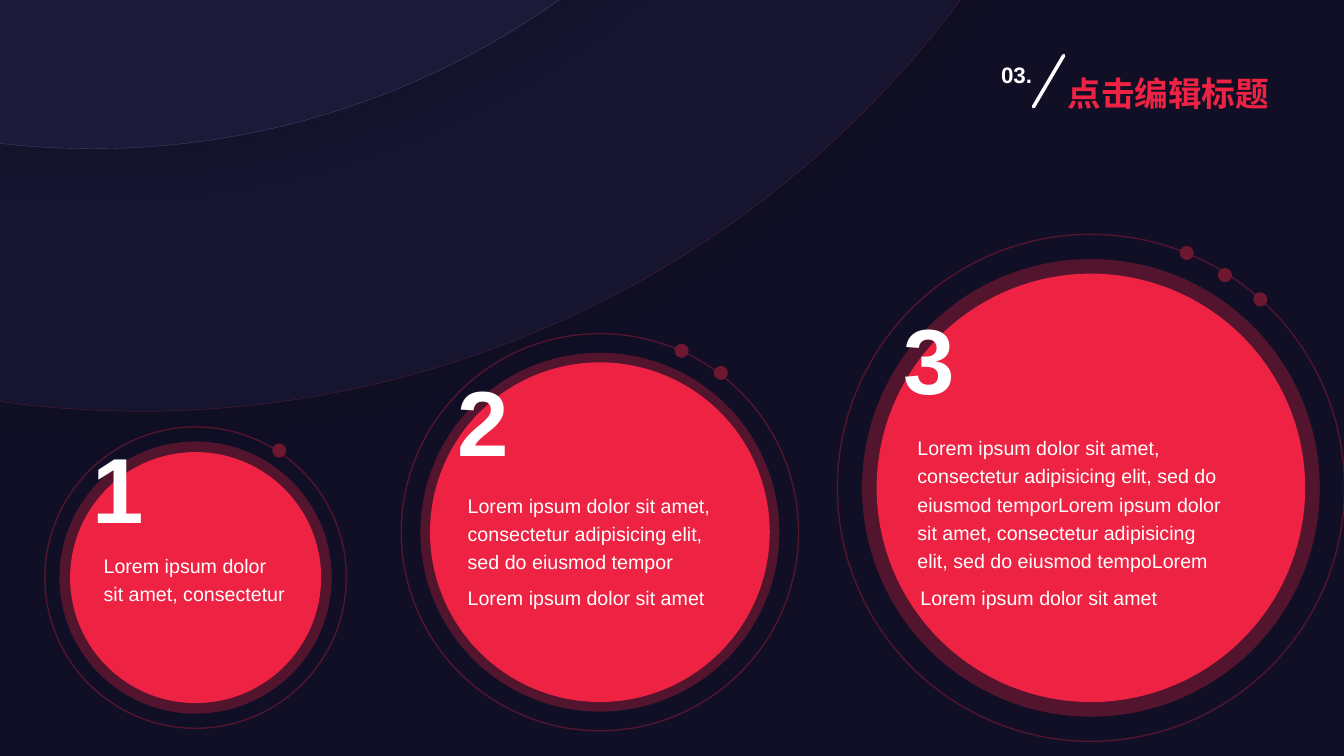
from lxml import etree
from pptx import Presentation
from pptx.dml.color import RGBColor
from pptx.enum.shapes import MSO_CONNECTOR, MSO_SHAPE
from pptx.oxml.ns import qn
from pptx.util import Inches, Pt

OVAL = MSO_SHAPE.OVAL
STRAIGHT = MSO_CONNECTOR.STRAIGHT
COLORS = {
    "night": "110F25",
    "outer_orbit": "17142F",
    "outer_edge": "581F36",
    "inner_orbit": "1D1A39",
    "inner_edge": "424266",
    "red": "EE2243",
    "dot": "6E1731",
    "white": "FFFFFF",
    "black": "000000",
}
FONT = "Arial"
DOT_SIZE = 0.14

LOREM = "Lorem ipsum dolor sit amet"
STAGES = [
    {"number": "1", "center": (1.94, 5.73), "diameters": (2.7, 2.99, 2.49),
     "number_at": (0.82, 4.23),
     "texts": [(0.93, 5.4, 2.03, 0.64, f"{LOREM}, consectetur")],
     "dots": [(2.7, 4.4)]},
    {"number": "2", "center": (5.95, 5.28), "diameters": (3.56, 3.94, 3.37),
     "number_at": (4.44, 3.56),
     "texts": [(4.54, 4.8, 2.81, 0.95,
                f"{LOREM}, consectetur adipisicing elit, sed do eiusmod tempor"),
               (4.54, 5.72, 2.61, 0.36, LOREM)],
     "dots": [(6.69, 3.41), (7.08, 3.63)]},
    {"number": "3", "center": (10.82, 4.84), "diameters": (4.54, 5.03, 4.25),
     "number_at": (8.86, 2.95),
     "texts": [(9, 4.23, 3.29, 2.08,
                f"{LOREM}, consectetur adipisicing elit, sed do eiusmod tempor"
                f"{LOREM}, consectetur adipisicing elit, sed do eiusmod tempoLorem"),
               (9.03, 5.72, 2.61, 0.36, LOREM)],
     "dots": [(11.7, 2.44), (12.08, 2.66), (12.43, 2.9)]},
]


def add_alpha(color_parent, percent):
    color = color_parent.find(".//" + qn("a:srgbClr"))
    etree.SubElement(color, qn("a:alpha"), val=str(percent * 1000))


class SlideBuilder:
    def __init__(self, slide):
        self.slide = slide
        self.shapes = slide.shapes

    def rgb(self, name):
        return RGBColor.from_string(COLORS[name])

    def background(self, color):
        fill = self.slide.background.fill
        fill.solid()
        fill.fore_color.rgb = self.rgb(color)

    def circle(self, center, diameter, fill=None, line=None, width=1, alpha=None):
        left, top = (value - diameter / 2 for value in center)
        circle = self.shapes.add_shape(
            OVAL, Inches(left), Inches(top), Inches(diameter), Inches(diameter))
        circle.shadow.inherit = False
        properties = circle.fill._xPr
        if fill:
            circle.fill.solid()
            circle.fill.fore_color.rgb = self.rgb(fill)
        else:
            circle.fill.background()
        if line:
            circle.line.color.rgb = self.rgb(line)
            circle.line.width = Pt(width)
        else:
            circle.line.fill.background()
        if alpha:
            add_alpha(properties, alpha)
        return circle

    def orbit(self, center, diameter, fill, line):
        circle = self.circle(center, diameter, fill, line, 0.25)
        effects = circle.fill._xPr.find(qn("a:effectLst"))
        shadow = etree.SubElement(
            effects, qn("a:outerShdw"), blurRad=str(Pt(39)), dist=str(Pt(5)),
            dir=str(70 * 60000), algn="ctr", rotWithShape="0")
        etree.SubElement(shadow, qn("a:srgbClr"), val=COLORS["black"])
        add_alpha(shadow, 10)

    def text(self, content, left, top, width, height, size=14,
             color="white", bold=False, spacing=None):
        box = self.shapes.add_textbox(
            Inches(left), Inches(top), Inches(width), Inches(height))
        frame = box.text_frame
        frame.word_wrap = True
        paragraph = frame.paragraphs[0]
        if spacing:
            paragraph.line_spacing = spacing
        run = paragraph.add_run()
        run.text = content
        run.font.name = FONT
        run.font.size = Pt(size)
        run.font.bold = bold
        run.font.color.rgb = self.rgb(color)

    def slash(self, start, end, color, width):
        slash = self.shapes.add_connector(
            STRAIGHT, *(Inches(value) for value in (*start, *end)))
        slash.line.color.rgb = self.rgb(color)
        slash.line.width = Pt(width)
        slash.line._ln.set("cap", "rnd")
        etree.SubElement(slash._element.spPr, qn("a:effectLst"))

    def stage(self, number, center, diameters, number_at, texts, dots):
        halo, ring, disc = diameters
        self.circle(center, halo, fill="red", alpha=30)
        self.circle(center, ring, line="red", alpha=30)
        self.circle(center, disc, fill="red")
        self.text(number, *number_at, 0.77, 1.21, size=66, bold=True)
        for left, top, width, height, content in texts:
            self.text(content, left, top, width, height, spacing=1.2)
        for left, top in dots:
            self.circle((left + DOT_SIZE / 2, top + DOT_SIZE / 2), DOT_SIZE, fill="dot")


def main():
    presentation = Presentation()
    presentation.slide_width = Inches(13.33)
    presentation.slide_height = Inches(7.5)
    builder = SlideBuilder(
        presentation.slides.add_slide(presentation.slide_layouts[6]))

    builder.background("night")
    builder.orbit((1.4, -6.05), 20.26, "outer_orbit", "outer_edge")
    builder.orbit((0.92, -6.51), 15.97, "inner_orbit", "inner_edge")
    for stage in STAGES:
        builder.stage(**stage)

    builder.text("点击编辑标题", 10.49, 0.59, 2.43, 0.54, size=24,
                 color="red", bold=True, spacing=1.2)
    builder.text("03.", 9.83, 0.56, 0.62, 0.37, size=16, bold=True)
    builder.slash((10.25, 1.06), (10.55, 0.55), "white", 2.5)

    presentation.save("out.pptx")


if __name__ == "__main__":
    main()
